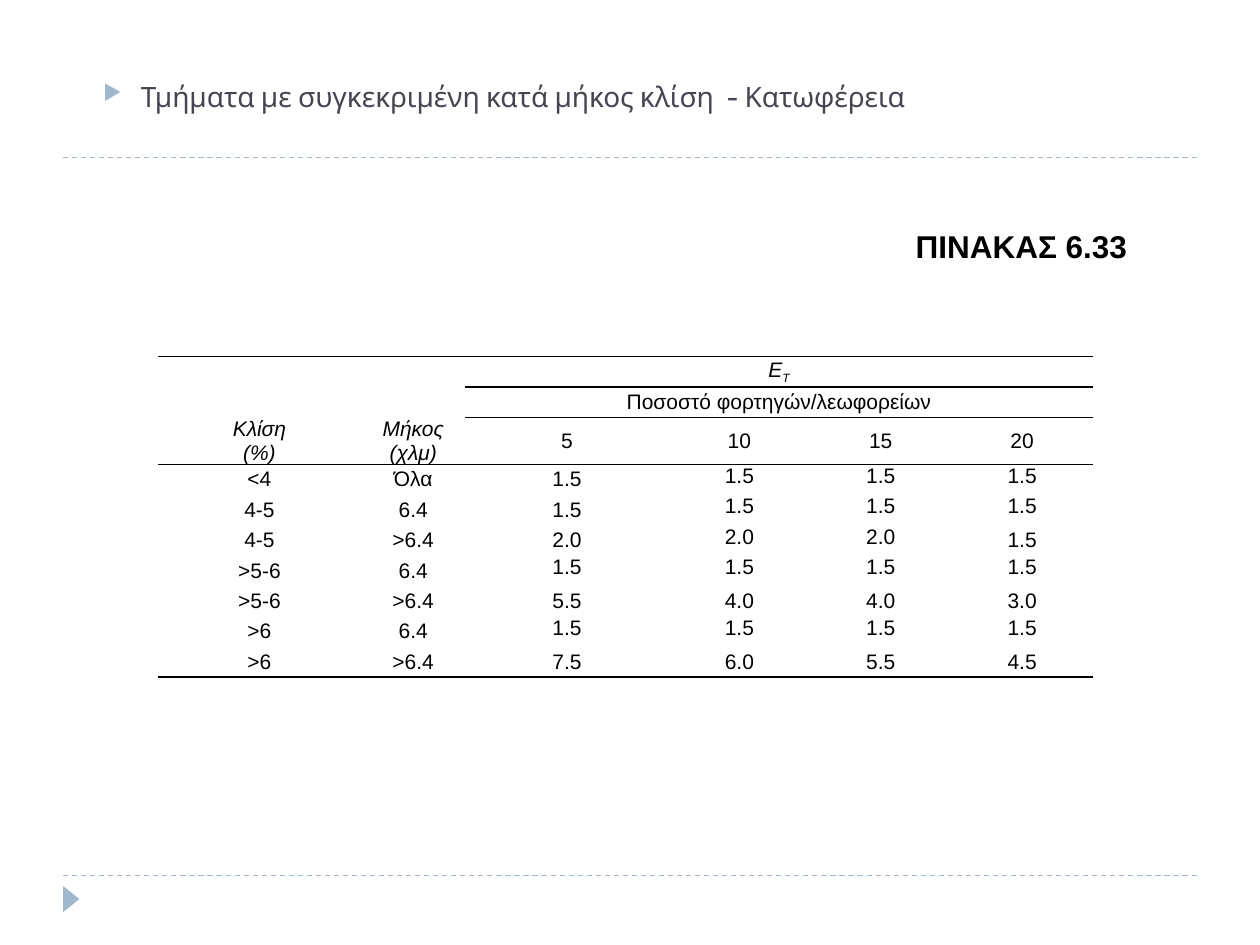
from lxml import etree
from pptx import Presentation
from pptx.dml.color import RGBColor
from pptx.enum.dml import MSO_LINE
from pptx.enum.shapes import MSO_CONNECTOR, MSO_SHAPE
from pptx.enum.text import MSO_ANCHOR, MSO_AUTO_SIZE, PP_ALIGN
from pptx.oxml.ns import qn
from pptx.util import Cm, Pt

STRAIGHT = MSO_CONNECTOR.STRAIGHT
TRIANGLE = MSO_SHAPE.ISOSCELES_TRIANGLE
DASH = MSO_LINE.DASH
TOP, MIDDLE, BOTTOM = MSO_ANCHOR.TOP, MSO_ANCHOR.MIDDLE, MSO_ANCHOR.BOTTOM
CENTER = PP_ALIGN.CENTER
FIT_SHAPE = MSO_AUTO_SIZE.SHAPE_TO_FIT_TEXT

BLACK = RGBColor(0x00, 0x00, 0x00)
SLATE = RGBColor(0x46, 0x46, 0x53)
BLUE = RGBColor(0x9F, 0xB8, 0xCD)

COLUMN_WIDTHS = [4.1, 2.1, 4.1, 2.85, 2.85, 2.85]
HEADER_ROWS = 3
ROWS = [
    ["Κλίση\n(%)", "Μήκος\n(χλμ)", "Ε", "", "", ""],
    ["", "", "Ποσοστό φορτηγών/λεωφορείων", "", "", ""],
    ["", "", "5", "10", "15", "20"],
    ["<4", "Όλα", "1.5", "1.5", "1.5", "1.5"],
    ["4-5", "6.4", "1.5", "1.5", "1.5", "1.5"],
    ["4-5", ">6.4", "2.0", "2.0", "2.0", "1.5"],
    [">5-6", "6.4", "1.5", "1.5", "1.5", "1.5"],
    [">5-6", ">6.4", "5.5", "4.0", "4.0", "3.0"],
    [">6", "6.4", "1.5", "1.5", "1.5", "1.5"],
    [">6", ">6.4", "7.5", "6.0", "5.5", "4.5"],
]
TOP_ANCHORED = {
    3: range(3, 6),
    4: range(3, 6),
    5: range(3, 5),
    6: range(2, 6),
    8: range(2, 6),
}


def style_font(font, name, size, color):
    font.name = name
    font.size = Pt(size)
    font.color.rgb = color


def add_rule(page, left, top, width):
    rule = page.shapes.add_connector(STRAIGHT, Cm(left), Cm(top), Cm(left + width), Cm(top))
    rule.line.color.rgb = BLUE
    rule.line.width = Pt(0.75)
    rule.line.dash_style = DASH
    etree.SubElement(rule._element.spPr, qn("a:effectLst"))


def add_frame(page, left, top, width, height):
    add_rule(page, left, top, width)
    add_rule(page, left, top + height, width)
    marker = page.shapes.add_shape(
        TRIANGLE, Cm(left - 0.1), Cm(top + height + 0.31), Cm(0.53), Cm(0.33)
    )
    marker.rotation = 90
    marker.shadow.inherit = False
    marker.fill.solid()
    marker.fill.fore_color.rgb = BLUE
    marker.line.fill.background()


def add_bullet(para):
    properties = para._p.get_or_add_pPr()
    properties.set("marL", str(Cm(1.52)))
    properties.set("indent", str(Cm(-0.76)))
    color = etree.SubElement(properties, qn("a:buClr"))
    etree.SubElement(color, qn("a:srgbClr"), val=str(BLUE))
    etree.SubElement(properties, qn("a:buSzPct"), val="76000")
    etree.SubElement(properties, qn("a:buChar"), char="▶")


def add_heading(page, left, top, width, height):
    box = page.shapes.add_textbox(Cm(left), Cm(top), Cm(width), Cm(height))
    box.text_frame.word_wrap = True
    para = box.text_frame.paragraphs[0]
    para.text = "Τμήματα με συγκεκριμένη κατά μήκος κλίση  - Κατωφέρεια"
    para.space_before = Pt(5)
    para.space_after = Pt(18)
    add_bullet(para)
    style_font(para.font, "Cabin", 16, SLATE)


def add_caption(page, left, top, width, height):
    box = page.shapes.add_textbox(Cm(left), Cm(top), Cm(width), Cm(height))
    box.text_frame.word_wrap = False
    box.text_frame.auto_size = FIT_SHAPE
    para = box.text_frame.paragraphs[0]
    para.text = "ΠΙΝΑΚΑΣ 6.33"
    style_font(para.font, "Arial", 18, BLACK)
    para.font.bold = True


def set_borders(cell, above, below):
    properties = cell._tc.get_or_add_tcPr()
    for side, shown in (("L", False), ("R", False), ("T", above), ("B", below)):
        line = etree.SubElement(properties, qn(f"a:ln{side}"), w=str(Pt(1)))
        if shown:
            fill = etree.SubElement(line, qn("a:solidFill"))
            etree.SubElement(fill, qn("a:srgbClr"), val=str(BLACK))
        else:
            etree.SubElement(line, qn("a:noFill"))


def fill_cell(cell, row, column, text):
    label = column < 2
    header = row < HEADER_ROWS
    cell.text = text
    cell.margin_left = cell.margin_right = Cm(0.18)
    cell.margin_top = cell.margin_bottom = 0
    if header and label:
        cell.vertical_anchor = BOTTOM
    else:
        cell.vertical_anchor = TOP if column in TOP_ANCHORED.get(row, ()) else MIDDLE
    above = row in (0, HEADER_ROWS) or (header and not label)
    below = row in (HEADER_ROWS - 1, len(ROWS) - 1) or (header and not label)
    set_borders(cell, above, below)
    cell.fill.background()
    for para in cell.text_frame.paragraphs:
        para.alignment = CENTER
        style_font(para.font, "Arial", 12, BLACK)
        para.font.italic = header and (label or row == 0)


def add_truck_table(page, left, top, width, height):
    table = page.shapes.add_table(
        len(ROWS), len(COLUMN_WIDTHS), Cm(left), Cm(top), Cm(width), Cm(height)
    ).table
    table.first_row = False
    table.horz_banding = False
    for column, share in zip(table.columns, COLUMN_WIDTHS):
        column.width = Cm(width * share / sum(COLUMN_WIDTHS))
    for row, texts in enumerate(ROWS):
        table.rows[row].height = Cm(height / len(ROWS))
        for column, text in enumerate(texts):
            fill_cell(table.cell(row, column), row, column, text)
    span = table.cell(0, 2).text_frame.paragraphs[0].add_run()
    span.text = "Τ"
    span._r.get_or_add_rPr().set("baseline", "-25000")
    for column in (0, 1):
        table.cell(0, column).merge(table.cell(HEADER_ROWS - 1, column))
    for row in (0, 1):
        table.cell(row, 2).merge(table.cell(row, 5))


def main():
    deck = Presentation()
    deck.slide_width = Cm(25.4)
    deck.slide_height = Cm(19.05)
    page = deck.slides.add_slide(deck.slide_layouts[6])
    add_frame(page, 1.27, 3.18, 22.86, 14.47)
    add_truck_table(page, 3.18, 7.19, 18.85, 6.12)
    add_heading(page, 1.07, 1.47, 22.86, 1.27)
    add_caption(page, 18.21, 4.45, 4.83, 1.02)
    deck.save("out.pptx")


if __name__ == "__main__":
    main()
